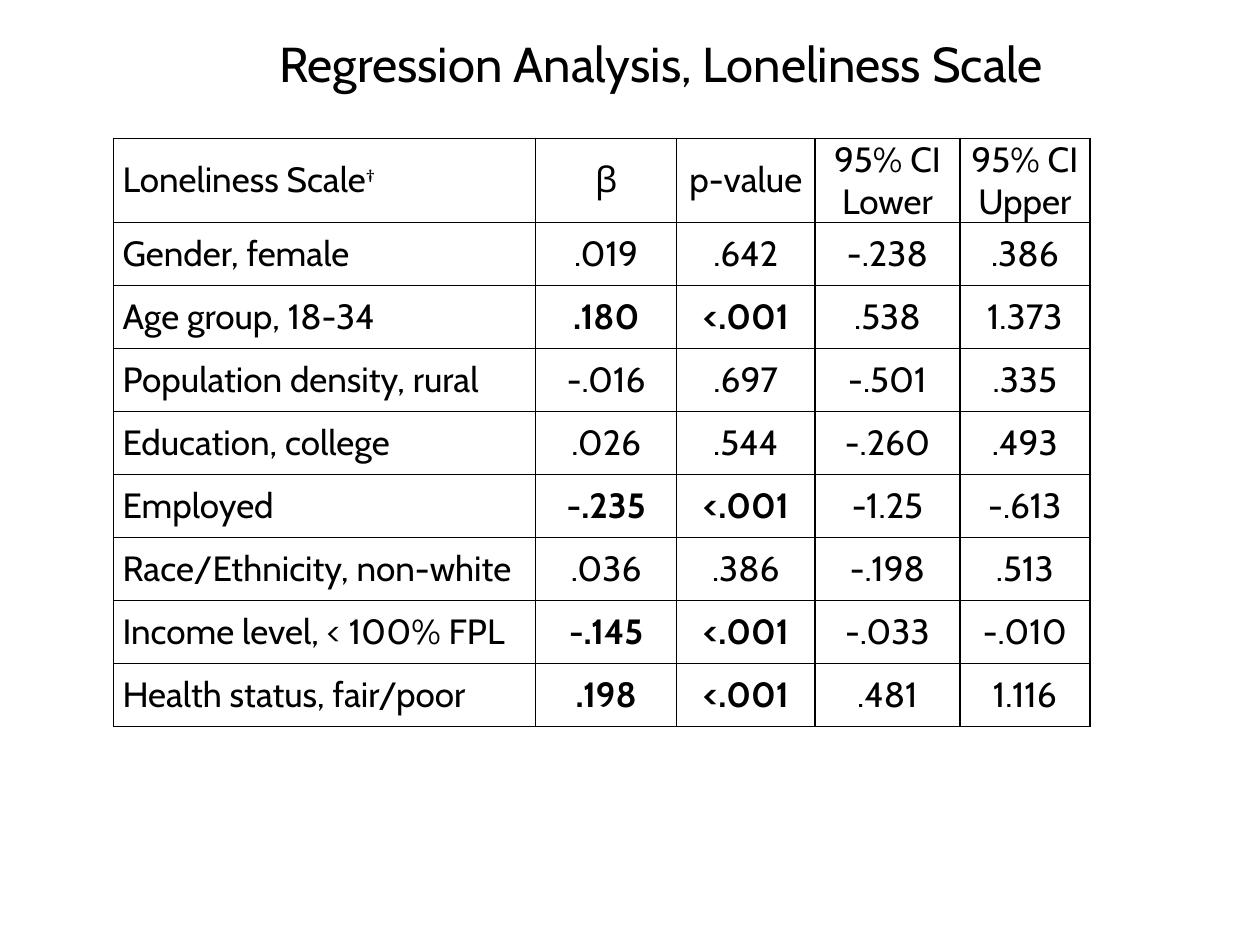
from lxml.etree import SubElement
from pptx import Presentation
from pptx.dml.color import RGBColor
from pptx.enum.text import MSO_ANCHOR as Anchor, PP_ALIGN as Align
from pptx.oxml.ns import qn
from pptx.util import Cm, Pt

BLACK = RGBColor(0x00, 0x00, 0x00)
FONT = "Cabin"
TITLE = "Regression Analysis, Loneliness Scale"
DAGGER = "†"
SIGNIFICANT = "<.001"
COLUMN_WIDTHS = (8.51, 2.84, 2.79, 2.92, 2.62)
HEADER_HEIGHT, ROW_HEIGHT = 1.6, 1.27
ROWS = (
    ("Loneliness Scale", "β", "p-value", "95% CI Lower", "95% CI Upper"),
    ("Gender, female", ".019", ".642", "-.238", ".386"),
    ("Age group, 18-34", ".180", "<.001", ".538", "1.373"),
    ("Population density, rural", "-.016", ".697", "-.501", ".335"),
    ("Education, college", ".026", ".544", "-.260", ".493"),
    ("Employed", "-.235", "<.001", "-1.25", "-.613"),
    ("Race/Ethnicity, non-white", ".036", ".386", "-.198", ".513"),
    ("Income level, < 100% FPL", "-.145", "<.001", "-.033", "-.010"),
    ("Health status, fair/poor", ".198", "<.001", ".481", "1.116"),
)
CELL_FORMAT = {
    "vertical_anchor": Anchor.MIDDLE,
    "margin_left": Cm(0.18),
    "margin_right": Cm(0.18),
    "margin_top": 0,
    "margin_bottom": 0,
}


def apply_format(target, values):
    for name, value in values.items():
        setattr(target, name, value)


def add_span(para, text, size, bold=False):
    span = para.add_run()
    span.text = text
    apply_format(span.font, {"name": FONT, "size": Pt(size), "bold": bold})
    span.font.color.rgb = BLACK
    return span


def add_title(page):
    box = page.shapes.add_textbox(Cm(2.62), Cm(0.33), Cm(21.41), Cm(1.88))
    apply_format(box.text_frame, {"word_wrap": True, "vertical_anchor": Anchor.MIDDLE})
    para = box.text_frame.paragraphs[0]
    para.alignment = Align.CENTER
    add_span(para, TITLE, 28)


def add_borders(cell):
    """Draw a thin line on all four sides; must run before the fill is set."""
    properties = cell._tc.get_or_add_tcPr()
    for side in ("lnL", "lnR", "lnT", "lnB"):
        line = SubElement(properties, qn(f"a:{side}"), w=str(Pt(1)))
        fill = SubElement(line, qn("a:solidFill"))
        SubElement(fill, qn("a:srgbClr"), val=str(BLACK))


def fill_cell(cell, text, centred, bold):
    apply_format(cell, CELL_FORMAT)
    add_borders(cell)
    cell.fill.background()
    para = cell.text_frame.paragraphs[0]
    para.alignment = Align.CENTER if centred else Align.LEFT
    add_span(para, text, 20, bold)
    return para


def add_results_table(page):
    heights = [HEADER_HEIGHT] + [ROW_HEIGHT] * (len(ROWS) - 1)
    frame = page.shapes.add_table(
        len(ROWS), len(COLUMN_WIDTHS), Cm(2.29), Cm(2.79),
        Cm(sum(COLUMN_WIDTHS)), Cm(sum(heights)))
    table = frame.table
    apply_format(table, {"first_row": False, "horz_banding": False})
    for column, width in zip(table.columns, COLUMN_WIDTHS):
        column.width = Cm(width)
    for row, height, texts in zip(table.rows, heights, ROWS):
        row.height = Cm(height)
        significant = SIGNIFICANT in texts
        for index, (cell, text) in enumerate(zip(row.cells, texts)):
            fill_cell(cell, text, index > 0, significant and index in (1, 2))
    heading = table.cell(0, 0).text_frame.paragraphs[0]
    mark = add_span(heading, DAGGER, 20)
    mark.font._element.set("baseline", "30000")


def main():
    deck = Presentation()
    apply_format(deck, {"slide_width": Cm(25.4), "slide_height": Cm(19.05)})
    page = deck.slides.add_slide(deck.slide_layouts[6])
    add_title(page)
    add_results_table(page)
    deck.save("out.pptx")


if __name__ == "__main__":
    main()
